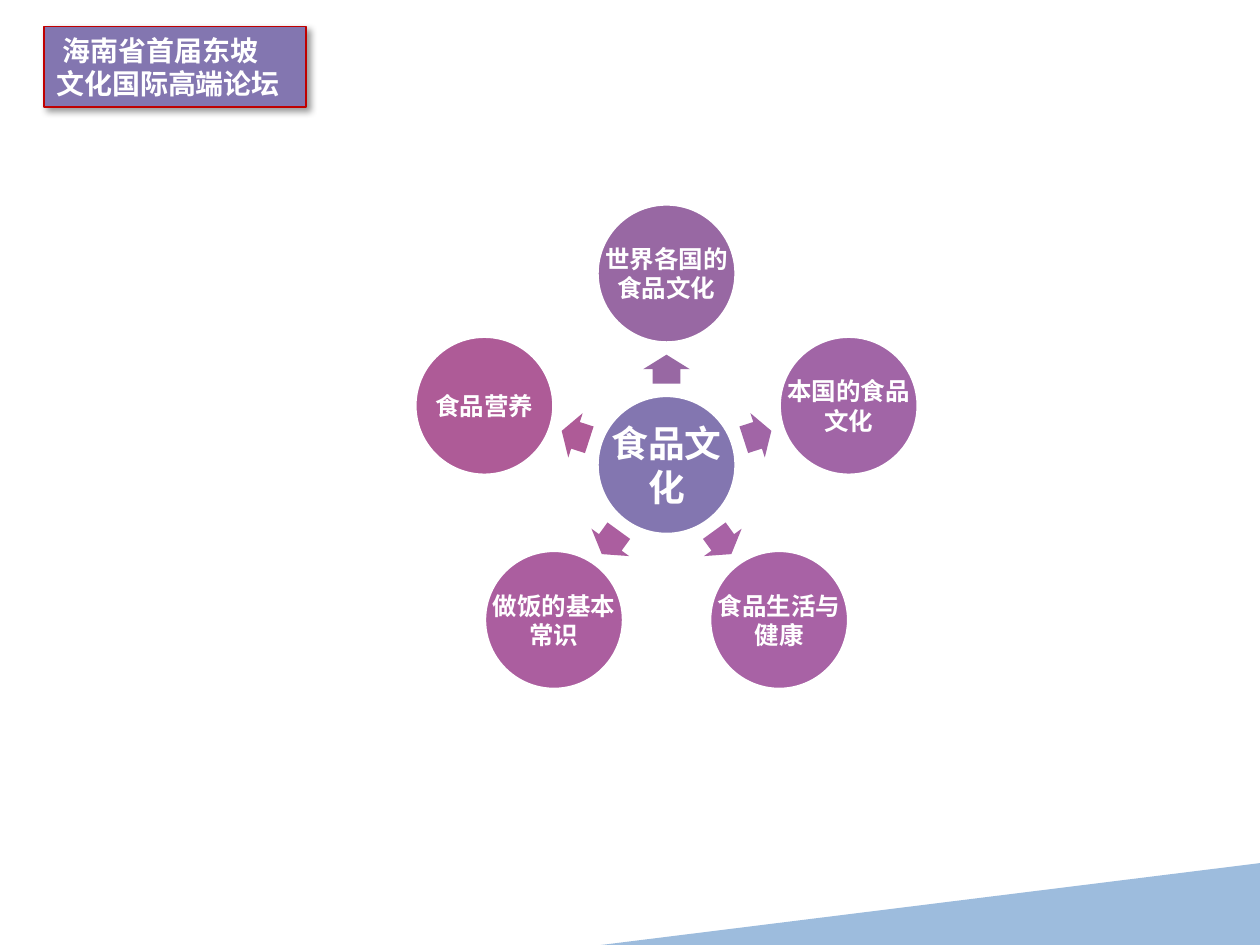
import math

import lxml.etree
import pptx
import pptx.dml.color
import pptx.enum.shapes
import pptx.enum.text
import pptx.oxml
import pptx.oxml.ns
import pptx.util

SHAPE = pptx.enum.shapes.MSO_SHAPE
ALIGN = pptx.enum.text.PP_ALIGN
FONT = "Noto Sans CJK SC"
WIDTH, HEIGHT = 10, 7.5
CENTER_X, CENTER_Y = 0.529 * WIDTH, 0.492 * HEIGHT
ORBIT = 1.52
DIAMETER = 1.09
ARROW_WIDTH, ARROW_HEIGHT = 0.23, 0.37
HUB = ("食品文化", "8376B0")
TOPICS = [
    ("世界各国的食品文化", "9868A3"),
    ("本国的食品文化", "A165A6"),
    ("食品生活与健康", "A862A5"),
    ("做饭的基本常识", "AB5E9F"),
    ("食品营养", "AE5B97"),
]


def color(value):
    return pptx.dml.color.RGBColor.from_string(value)


def paint(shape, fill, line=None):
    shape.shadow.inherit = False
    shape.fill.solid()
    shape.fill.fore_color.rgb = color(fill)
    if line:
        shape.line.color.rgb = color(line)
        shape.line.width = pptx.util.Pt(1)
    else:
        shape.line.fill.background()


def add_shape(page, kind, left, top, width, height, fill, line=None):
    lengths = [pptx.util.Inches(length) for length in (left, top, width, height)]
    shape = page.shapes.add_shape(kind, *lengths)
    paint(shape, fill, line)
    return shape


def write(frame, lines, size, align):
    frame.word_wrap = True
    frame.vertical_anchor = pptx.enum.text.MSO_ANCHOR.MIDDLE
    for index, line in enumerate(lines):
        para = frame.add_paragraph() if index else frame.paragraphs[0]
        para.alignment = align
        para.line_spacing = pptx.util.Pt(round(size * 1.2, 1))
        span = para.add_run()
        span.text = line
        span.font.size = pptx.util.Pt(size)
        span.font.bold = True
        span.font.name = FONT
        span.font.color.rgb = color("FFFFFF")
        properties = span._r.get_or_add_rPr()
        lxml.etree.SubElement(properties, pptx.oxml.ns.qn("a:ea"), typeface=FONT)


def add_circle(page, x, y, text, fill, size, inset):
    left, top = x - DIAMETER / 2, y - DIAMETER / 2
    add_shape(page, SHAPE.OVAL, left, top, DIAMETER, DIAMETER, fill, "FFFFFF")
    lengths = [pptx.util.Inches(length) for length in (left, top, DIAMETER, DIAMETER)]
    frame = page.shapes.add_textbox(*lengths).text_frame
    frame.margin_left = frame.margin_right = pptx.util.Inches(inset)
    frame.margin_top = frame.margin_bottom = pptx.util.Inches(inset)
    write(frame, [text], size, ALIGN.CENTER)


def orbit_point(angle, radius):
    turn = math.radians(angle)
    return CENTER_X + radius * math.cos(turn), CENTER_Y + radius * math.sin(turn)


def add_arrow(page, angle, fill):
    x, y = orbit_point(angle, ORBIT / 2)
    arrow = add_shape(page, SHAPE.RIGHT_ARROW, x - ARROW_WIDTH / 2,
                      y - ARROW_HEIGHT / 2, ARROW_WIDTH, ARROW_HEIGHT, fill)
    arrow.adjustments[0] = 0.6
    arrow.adjustments[1] = 0.5
    arrow.rotation = angle % 360


def add_wheel(page):
    add_circle(page, CENTER_X, CENTER_Y, *HUB, 21, 0.03)
    for index, (text, fill) in enumerate(TOPICS):
        angle = index * 360 / len(TOPICS) - 90
        add_arrow(page, angle, fill)
        add_circle(page, *orbit_point(angle, ORBIT), text, fill, 14, 0.02)


def add_slopes(page):
    points = [(WIDTH, 6.61), (WIDTH, 7.44), (6.73, HEIGHT), (3.28, HEIGHT)]
    builder = page.shapes.build_freeform(*points[0], scale=pptx.util.Inches(1))
    builder.add_line_segments(points[1:], close=True)
    paint(builder.convert_to_shape(), "BED2E9")
    slope = add_shape(page, SHAPE.ISOSCELES_TRIANGLE, 4.77, 6.85, 5.23, 0.65, "9DBCDD")
    slope.adjustments[0] = 1


def add_drop_shadow(shape):
    effects = shape._element.spPr.find(pptx.oxml.ns.qn("a:effectLst"))
    effects.append(pptx.oxml.parse_xml(
        f'<a:outerShdw {pptx.oxml.ns.nsdecls("a")} blurRad="50800" dist="38100" '
        'dir="2700000" algn="tl" rotWithShape="0">'
        '<a:srgbClr val="000000"><a:alpha val="40000"/></a:srgbClr></a:outerShdw>'))


def add_banner(page):
    banner = add_shape(page, SHAPE.RECTANGLE, 0.35, 0.21, 2.08, 0.64, "8376B0", "C00000")
    add_drop_shadow(banner)
    write(banner.text_frame, [" 海南省首届东坡", "文化国际高端论坛"], 16, ALIGN.LEFT)


def main():
    deck = pptx.Presentation()
    deck.slide_width = pptx.util.Inches(WIDTH)
    deck.slide_height = pptx.util.Inches(HEIGHT)
    page = deck.slides.add_slide(deck.slide_layouts[6])
    add_slopes(page)
    add_wheel(page)
    add_banner(page)
    deck.save("out.pptx")


if __name__ == "__main__":
    main()
